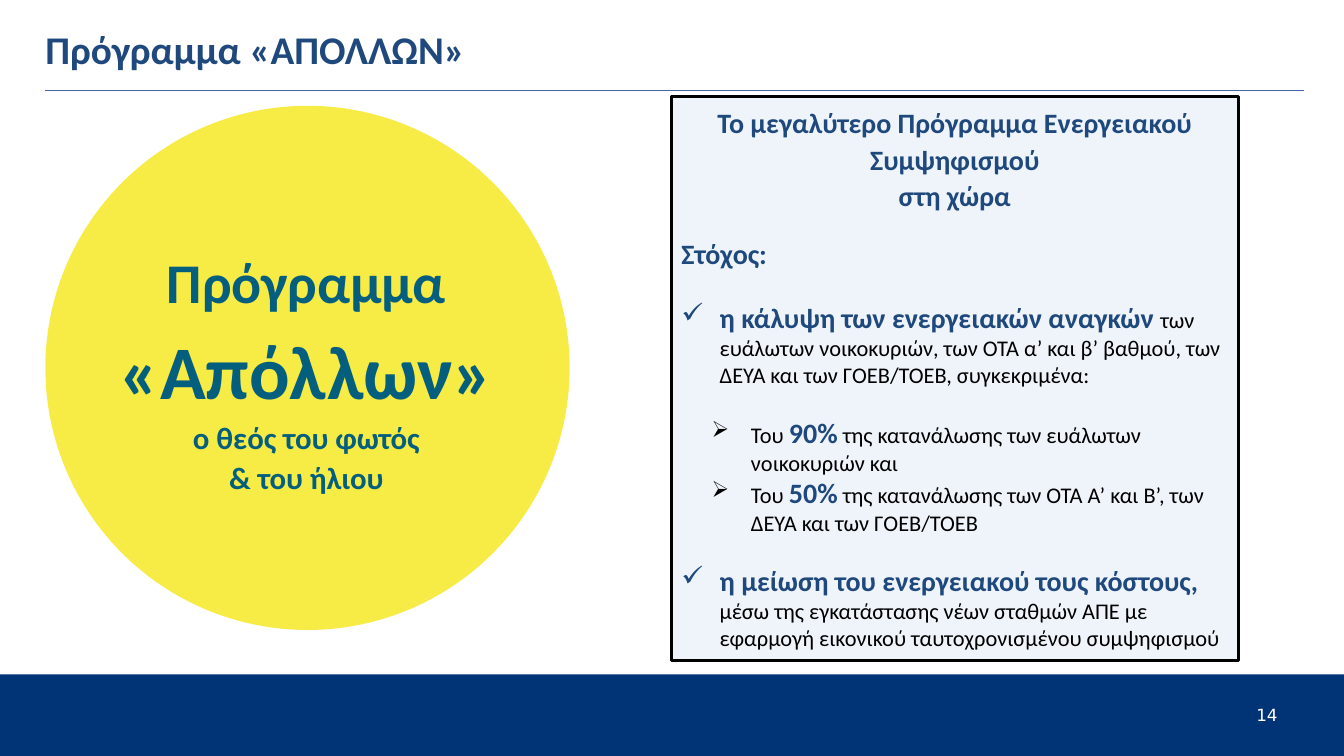
from lxml import etree
from pptx import Presentation
from pptx.dml.color import RGBColor
from pptx.enum.shapes import MSO_CONNECTOR, MSO_SHAPE
from pptx.enum.text import MSO_ANCHOR, PP_ALIGN
from pptx.oxml.ns import qn
from pptx.util import Inches, Pt

COLORS = {"navy": "003476", "rule": "4966AC", "heading": "1F497D", "sun": "F7EB46",
          "teal": "045F7E", "panel": "C6D9F1", "black": "000000", "white": "FFFFFF"}

# Run styles: size, colour, bold, font
STYLES = {
    "title": (28, "heading", True, "Calibri"),
    "sun_top": (40, "teal", True, "Calibri"),
    "sun_name": (54, "teal", True, "Calibri"),
    "sun_note": (22, "teal", True, "Calibri"),
    "strong": (20, "heading", True, "Calibri"),
    "body": (16, "black", False, "Calibri"),
    "number": (12, "white", False, "DejaVu Sans"),
}

# Paragraphs: (format, [(text, style), ...]); "\n" is a line break
CENTER = {"alignment": PP_ALIGN.CENTER, "line_spacing": 1.1}
CHECK = {"bullet": ("✓", 0.38, 0.38)}
ARROW = {"bullet": ("➢", 0.69, 0.39)}

TITLE = [({}, [("Πρόγραμμα «ΑΠΟΛΛΩΝ»", "title")])]
SUN = [
    (CENTER, [("Πρόγραμμα", "sun_top")]),
    (CENTER, [("«Απόλλων»\n", "sun_name"), ("ο θεός του φωτός\n& του ήλιου", "sun_note")]),
]
GOALS = [
    (CENTER, [("Το μεγαλύτερο Πρόγραμμα Ενεργειακού Συμψηφισμού", "strong")]),
    (CENTER, [("στη χώρα", "strong")]),
    ({"space_before": Pt(17)}, [("Στόχος:", "strong")]),
    (CHECK | {"space_before": Pt(22)}, [
        ("η κάλυψη των ενεργειακών αναγκών ", "strong"),
        ("των ευάλωτων νοικοκυριών, των ΟΤΑ α’ και β’ βαθμού, των ΔΕΥΑ και των "
         "ΓΟΕΒ/ΤΟΕΒ, συγκεκριμένα:", "body")]),
    (ARROW | {"space_before": Pt(19.5)}, [
        ("Του ", "body"), ("90%", "strong"),
        (" της κατανάλωσης των ευάλωτων νοικοκυριών και", "body")]),
    (ARROW, [
        ("Του ", "body"), ("50%", "strong"),
        (" της κατανάλωσης των ΟΤΑ Α’ και Β’, των ΔΕΥΑ και των ΓΟΕΒ/ΤΟΕΒ", "body")]),
    (CHECK | {"space_before": Pt(19.5)}, [
        ("η μείωση του ενεργειακού τους κόστους, ", "strong"),
        ("μέσω της εγκατάστασης νέων σταθμών ΑΠΕ με εφαρμογή εικονικού "
         "ταυτοχρονισμένου συμψηφισμού", "body")]),
]
NUMBER = [({"line_spacing": 0.87}, [("14", "number")])]

WIDTH, HEIGHT = 13.33, 7.5
MARGIN, BAND_TOP, RULE_Y = 0.45, 6.69, 0.9


def rgb(name):
    return RGBColor.from_string(COLORS[name])


def add_bullet(paragraph, char, left, hang):
    props = paragraph._p.get_or_add_pPr()
    props.set("marL", str(Inches(left)))
    props.set("indent", str(-Inches(hang)))
    etree.SubElement(props, qn("a:buChar")).set("char", char)


def write(shape, paragraphs, inset=(0, 0), anchor=MSO_ANCHOR.TOP):
    frame = shape.text_frame
    across, down = map(Inches, inset)
    layout = {"word_wrap": True, "vertical_anchor": anchor, "margin_left": across,
              "margin_right": across, "margin_top": down, "margin_bottom": down}
    for key, value in layout.items():
        setattr(frame, key, value)
    for index, (look, runs) in enumerate(paragraphs):
        paragraph = frame.add_paragraph() if index else frame.paragraphs[0]
        for key, value in ({"alignment": PP_ALIGN.LEFT} | look).items():
            if key != "bullet":
                setattr(paragraph, key, value)
        if "bullet" in look:
            add_bullet(paragraph, *look["bullet"])
        for text, style in runs:
            size, color, bold, font = STYLES[style]
            for line, words in enumerate(text.split("\n")):
                if line:
                    paragraph.add_line_break()
                if not words:
                    continue
                run = paragraph.add_run()
                run.text = words
                for key, value in {"size": Pt(size), "bold": bold, "name": font}.items():
                    setattr(run.font, key, value)
                run.font.color.rgb = rgb(color)


def add_filled(slide, kind, box, fill):
    shape = slide.shapes.add_shape(kind, *map(Inches, box))
    shape.shadow.inherit = False
    shape.fill.solid()
    shape.fill.fore_color.rgb = rgb(fill)
    shape.line.fill.background()
    return shape


def add_text(slide, box, paragraphs, **layout):
    write(slide.shapes.add_textbox(*map(Inches, box)), paragraphs, **layout)


def main():
    deck = Presentation()
    deck.slide_width, deck.slide_height = Inches(WIDTH), Inches(HEIGHT)
    slide = deck.slides.add_slide(deck.slide_layouts[6])

    # Footer band and rule under the title
    add_filled(slide, MSO_SHAPE.RECTANGLE, (0, BAND_TOP, WIDTH, HEIGHT - BAND_TOP), "navy")
    rule = slide.shapes.add_connector(
        MSO_CONNECTOR.STRAIGHT, *map(Inches, (MARGIN, RULE_Y, 12.93, RULE_Y)))
    rule.line.color.rgb = rgb("rule")
    rule.line.width = Pt(0.96)
    etree.SubElement(rule._element.spPr, qn("a:effectLst"))

    # Title
    add_text(slide, (MARGIN, 0.19, 12.44, 0.58), TITLE, anchor=MSO_ANCHOR.MIDDLE)

    # Sun with the programme name
    add_filled(slide, MSO_SHAPE.OVAL, (MARGIN, 1.05, 5.2, 5.2), "sun")
    add_text(slide, (-0.09, 2.33, 6.26, 2.65), SUN, inset=(0.06, 0.06),
             anchor=MSO_ANCHOR.MIDDLE)

    # Page number
    add_text(slide, (12.46, 7.02, 0.42, 0.14), NUMBER)

    # Goals panel
    panel = add_filled(slide, MSO_SHAPE.RECTANGLE, (6.66, 0.96, 5.62, 5.59), "panel")
    tint = panel._element.spPr.find(qn("a:solidFill"))[0]
    etree.SubElement(tint, qn("a:alpha")).set("val", "28000")
    panel.line.color.rgb = rgb("black")
    panel.line.width = Pt(2)
    write(panel, GOALS, inset=(0.1, 0.05))

    deck.save("out.pptx")


if __name__ == "__main__":
    main()
